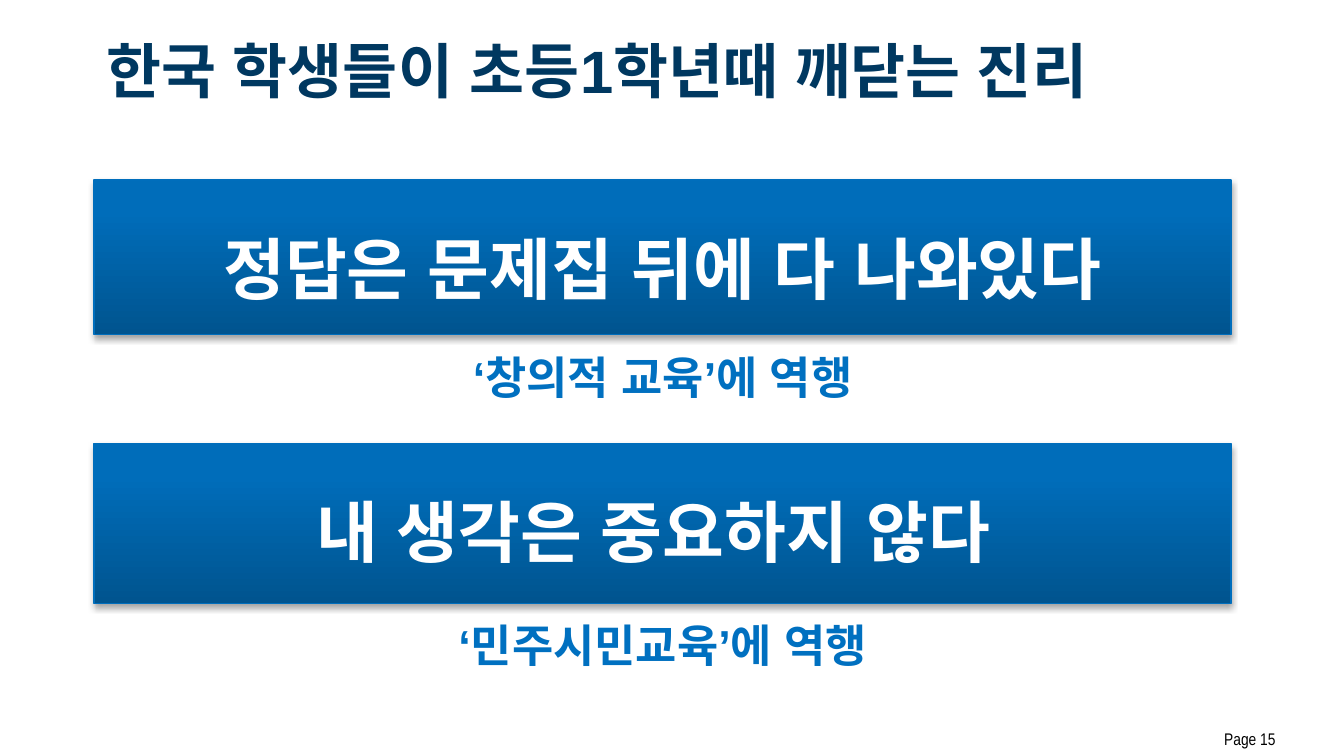
import pptx
import pptx.util
import pptx.dml.color
import pptx.enum.lang
import pptx.enum.shapes
import pptx.enum.text
import pptx.oxml
import pptx.oxml.ns

Inches, Pt = pptx.util.Inches, pptx.util.Pt
ALIGN = pptx.enum.text.PP_ALIGN
ANCHOR = pptx.enum.text.MSO_ANCHOR
NS = pptx.oxml.ns.nsdecls("a")

TITLE = "한국 학생들이 초등1학년때 깨닫는 진리"
PAGE = "Page 15"
LESSONS = [
    {"top": 1.34, "height": 1.15, "truth": "정답은 문제집 뒤에 다 나와있다", "against": "‘창의적 교육’에 역행"},
    {"top": 3.3, "height": 1.19, "truth": "내 생각은 중요하지 않다 ", "against": "‘민주시민교육’에 역행"},
]
COLORS = {
    "title": "003860", "note": "0070C0", "white": "FFFFFF", "black": "000000",
    "edge": "006EBC", "dark": "00548F", "mid": "006DBA", "light": "006DBB",
}
KOREAN = "Noto Sans CJK KR"
WIDTH = 10
HEIGHT = WIDTH * 9 / 16
BAR_LEFT, BAR_WIDTH = 0.7, 8.46
NOTE_LEFT, NOTE_WIDTH, NOTE_HEIGHT, NOTE_GAP = 2.92, 4.02, 0.5, 0.06


def rgb(name):
    return pptx.dml.color.RGBColor.from_string(COLORS[name])


def write(sp, text, size, color, align, font=KOREAN, bold=True, spacing=None):
    tf = sp.text_frame
    tf.word_wrap = True
    tf.vertical_anchor = ANCHOR.TOP
    p = tf.paragraphs[0]
    p.text = text
    p.alignment = align
    p.line_spacing = spacing
    r = p.runs[0]
    r.font.size, r.font.bold, r.font.name = Pt(size), bold, font
    r.font.language_id = pptx.enum.lang.MSO_LANGUAGE_ID.KOREAN
    r.font.color.rgb = rgb(color)
    ea = pptx.oxml.parse_xml(f'<a:ea {NS} typeface="Arial"/>')
    r.font._element.append(ea)
    return tf


def add_text(s, box, *args, **kwargs):
    sp = s.shapes.add_textbox(*map(Inches, box))
    return write(sp, *args, **kwargs)


def add_bar(s, box, text):
    sp = s.shapes.add_shape(pptx.enum.shapes.MSO_SHAPE.RECTANGLE, *map(Inches, box))
    sp.line.color.rgb = rgb("edge")
    sp.line.width = Pt(0.75)
    stops = "".join(
        f'<a:gs pos="{pos * 1000}"><a:srgbClr val="{COLORS[name]}"/></a:gs>'
        for pos, name in ((0, "dark"), (80, "mid"), (100, "light"))
    )
    props = sp._element.spPr
    props.insert(2, pptx.oxml.parse_xml(
        f'<a:gradFill {NS} rotWithShape="1"><a:gsLst>{stops}</a:gsLst>'
        '<a:lin ang="16200000" scaled="0"/></a:gradFill>'))
    props.append(pptx.oxml.parse_xml(
        f'<a:effectLst {NS}><a:outerShdw blurRad="{Pt(3.1)}" dist="{Pt(1.8)}" dir="5400000" rotWithShape="0">'
        f'<a:srgbClr val="{COLORS["black"]}"><a:alpha val="35000"/></a:srgbClr>'
        '</a:outerShdw></a:effectLst>'))
    write(sp, text, 36, "white", ALIGN.CENTER, spacing=1.5)


def main():
    prs = pptx.Presentation()
    prs.slide_width, prs.slide_height = Inches(WIDTH), Inches(HEIGHT)
    s = prs.slides.add_slide(prs.slide_layouts[6])

    tf = add_text(s, (7.17, 5.36, 2.32, 0.27), PAGE, 9, "black", ALIGN.RIGHT,
                  font="Arial Narrow", bold=False)
    tf.margin_left = tf.margin_right = tf.margin_top = tf.margin_bottom = 0
    tf.vertical_anchor = ANCHOR.MIDDLE

    tf = add_text(s, (0.09, 0.35, 9.91, 0.49), TITLE, 32, "title", ALIGN.LEFT,
                  font="Arial", spacing=Pt(28))
    tf.margin_left = Inches(0.7)

    for lesson in LESSONS:
        top, height = lesson["top"], lesson["height"]
        add_bar(s, (BAR_LEFT, top, BAR_WIDTH, height), lesson["truth"])
        add_text(s, (NOTE_LEFT, top + height + NOTE_GAP, NOTE_WIDTH, NOTE_HEIGHT),
                 lesson["against"], 24, "note", ALIGN.CENTER)

    prs.save("out.pptx")


if __name__ == "__main__":
    main()
